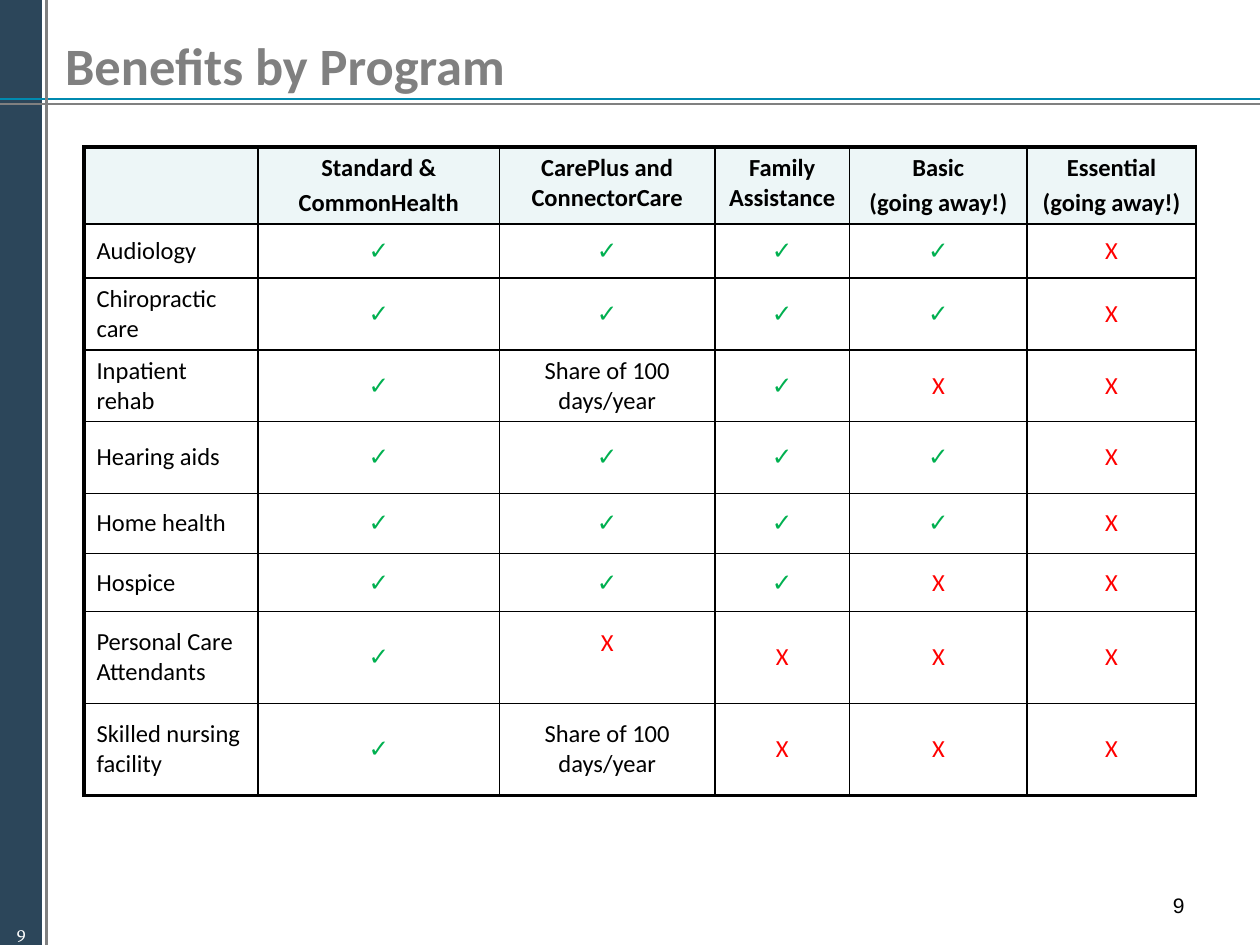
"""Build the "Benefits by Program" slide with its coverage table."""
from typing import NamedTuple

from lxml.etree import SubElement
from pptx import Presentation
from pptx.dml.color import RGBColor
from pptx.enum.shapes import MSO_CONNECTOR as Connector, MSO_SHAPE as Shape
from pptx.enum.text import MSO_ANCHOR as Anchor, PP_ALIGN as Align
from pptx.oxml import parse_xml
from pptx.oxml.ns import nsdecls, qn
from pptx.util import Pt

WIDTH, HEIGHT = 720, 540
BLACK, GREY, TEAL, NAVY = "000000", "808080", "008AB0", "2C465A"
WHITE, HEADER_TINT = "FFFFFF", "EDF6F7"
YES, NO, SHARED = "✓", "X", "Share of 100 days/year"
ANSWER_COLORS = {YES: "00B050", NO: "FF0000"}
THICK, THIN = 2.25, 1

COLUMN_WIDTHS = (99.5, 138, 123, 77, 101.5, 96.5)
PROGRAMS = (
    "",
    "Standard &\nCommonHealth",
    "CarePlus and ConnectorCare",
    "Family Assistance",
    "Basic\n(going away!)",
    "Essential\n(going away!)",
)
HEADER_HEIGHT = 44


class Benefit(NamedTuple):
    name: str
    height: float
    answers: tuple[str, ...]


class Rule(NamedTuple):
    start: tuple[float, float]
    end: tuple[float, float]
    color: str


class PageNumber(NamedTuple):
    box: tuple[float, float, float, float]
    font: str
    size: float
    color: str
    align: Align
    anchor: Anchor
    inset: tuple[float, float]


BENEFITS = (
    Benefit("Audiology", 31, (YES, YES, YES, YES, NO)),
    Benefit("Chiropractic care", 41, (YES, YES, YES, YES, NO)),
    Benefit("Inpatient rehab", 41, (YES, SHARED, YES, NO, NO)),
    Benefit("Hearing aids", 41, (YES, YES, YES, YES, NO)),
    Benefit("Home health", 34.5, (YES, YES, YES, YES, NO)),
    Benefit("Hospice", 33, (YES, YES, YES, NO, NO)),
    Benefit("Personal Care Attendants", 52.5, (YES, NO, NO, NO, NO)),
    Benefit("Skilled nursing facility", 52.5, (YES, SHARED, NO, NO, NO)),
)
RULES = (
    Rule((0, 59.5), (WIDTH, 59.5), GREY),
    Rule((0, 56.5), (WIDTH, 56.5), TEAL),
    Rule((26.5, 0), (26.5, HEIGHT), GREY),
)
PAGE_NUMBERS = (
    PageNumber((0, 527, 24, 12), "Vollkorn", 10, WHITE, Align.CENTER, Anchor.MIDDLE, (0, 0)),
    PageNumber((516, 492, 168, 36), "Arial", 12, BLACK, Align.RIGHT, Anchor.BOTTOM, (7.2, 3.6)),
)


def rgb(color: str) -> RGBColor:
    return RGBColor.from_string(color)


def style(paragraph, font: str, size: float, color: str, align: Align, bold: bool = False) -> None:
    paragraph.alignment = align
    paragraph.font.name = font
    paragraph.font.size = Pt(size)
    paragraph.font.bold = bold
    paragraph.font.color.rgb = rgb(color)


def place(shape, left: float, top: float, width: float, height: float) -> None:
    shape.left, shape.top, shape.width, shape.height = map(Pt, (left, top, width, height))


def draw_sidebar(slide) -> None:
    sidebar = slide.shapes.add_shape(Shape.RECTANGLE, 0, 0, Pt(24), Pt(HEIGHT))
    sidebar.shadow.inherit = False
    sidebar.fill.solid()
    sidebar.fill.fore_color.rgb = rgb(NAVY)
    sidebar.line.fill.background()


def draw_rule(slide, rule: Rule) -> None:
    line = slide.shapes.add_connector(Connector.STRAIGHT, *map(Pt, rule.start + rule.end))
    line.line.color.rgb = rgb(rule.color)
    line.line.width = Pt(1.5)
    SubElement(line._element.spPr, qn("a:effectLst"))


def draw_page_number(slide, number: PageNumber) -> None:
    frame = slide.shapes.add_textbox(*map(Pt, number.box)).text_frame
    frame.word_wrap = number.align == Align.RIGHT
    frame.vertical_anchor = number.anchor
    side, edge = map(Pt, number.inset)
    frame.margin_left = frame.margin_right = side
    frame.margin_top = frame.margin_bottom = edge
    frame.text = "9"
    style(frame.paragraphs[0], number.font, number.size, number.color, number.align)


def draw_title(slide) -> None:
    title = slide.shapes.title
    place(title, 30, 0, 648, 74)
    title.text_frame.text = "Benefits by Program"
    title.text_frame.vertical_anchor = Anchor.MIDDLE
    style(title.text_frame.paragraphs[0], "Calibri", 30, GREY, Align.LEFT, bold=True)


def set_borders(cell, left: float, right: float, top: float, bottom: float) -> None:
    properties = cell._tc.get_or_add_tcPr()
    for side, width in zip("LRTB", (left, right, top, bottom)):
        properties.append(parse_xml(
            f'<a:ln{side} {nsdecls("a")} w="{Pt(width)}"><a:solidFill>'
            f'<a:srgbClr val="{BLACK}"/></a:solidFill></a:ln{side}>'
        ))


def fill_cell(cell, text: str, row: int, column: int) -> None:
    is_header = row == 0
    set_borders(
        cell,
        left=THIN if column else THICK,
        right=THIN,
        top=THICK if is_header else THIN,
        bottom=THICK if row == len(BENEFITS) else THIN,
    )
    if is_header:
        cell.fill.solid()
        cell.fill.fore_color.rgb = rgb(HEADER_TINT)
    else:
        cell.fill.background()
    cell.vertical_anchor = Anchor.TOP if is_header else Anchor.MIDDLE
    cell.text = text
    align = Align.CENTER if column else Align.LEFT
    for index, paragraph in enumerate(cell.text_frame.paragraphs):
        if index:
            paragraph.space_before = Pt(2.8)
        style(paragraph, "Calibri", 14, ANSWER_COLORS.get(text, BLACK), align, is_header)


def draw_benefits(slide) -> None:
    heights = (HEADER_HEIGHT, *(benefit.height for benefit in BENEFITS))
    texts = (PROGRAMS, *((benefit.name, *benefit.answers) for benefit in BENEFITS))
    table = slide.shapes.add_table(
        len(heights), len(COLUMN_WIDTHS),
        Pt(48), Pt(84), Pt(sum(COLUMN_WIDTHS)), Pt(sum(heights)),
    ).table
    table.first_row = table.horz_banding = False
    for column, width in zip(table.columns, COLUMN_WIDTHS):
        column.width = Pt(width)
    for row, (height, row_texts) in enumerate(zip(heights, texts)):
        table.rows[row].height = Pt(height)
        for column, text in enumerate(row_texts):
            fill_cell(table.cell(row, column), text, row, column)
    attendants_row = [benefit.name for benefit in BENEFITS].index("Personal Care Attendants") + 1
    table.cell(attendants_row, 2).margin_bottom = Pt(20.5)


def main() -> None:
    presentation = Presentation()
    presentation.slide_width, presentation.slide_height = Pt(WIDTH), Pt(HEIGHT)
    slide = presentation.slides.add_slide(presentation.slide_layouts.get_by_name("Title Only"))
    draw_sidebar(slide)
    for rule in RULES:
        draw_rule(slide, rule)
    for number in PAGE_NUMBERS:
        draw_page_number(slide, number)
    draw_title(slide)
    draw_benefits(slide)
    presentation.save("out.pptx")


if __name__ == "__main__":
    main()
